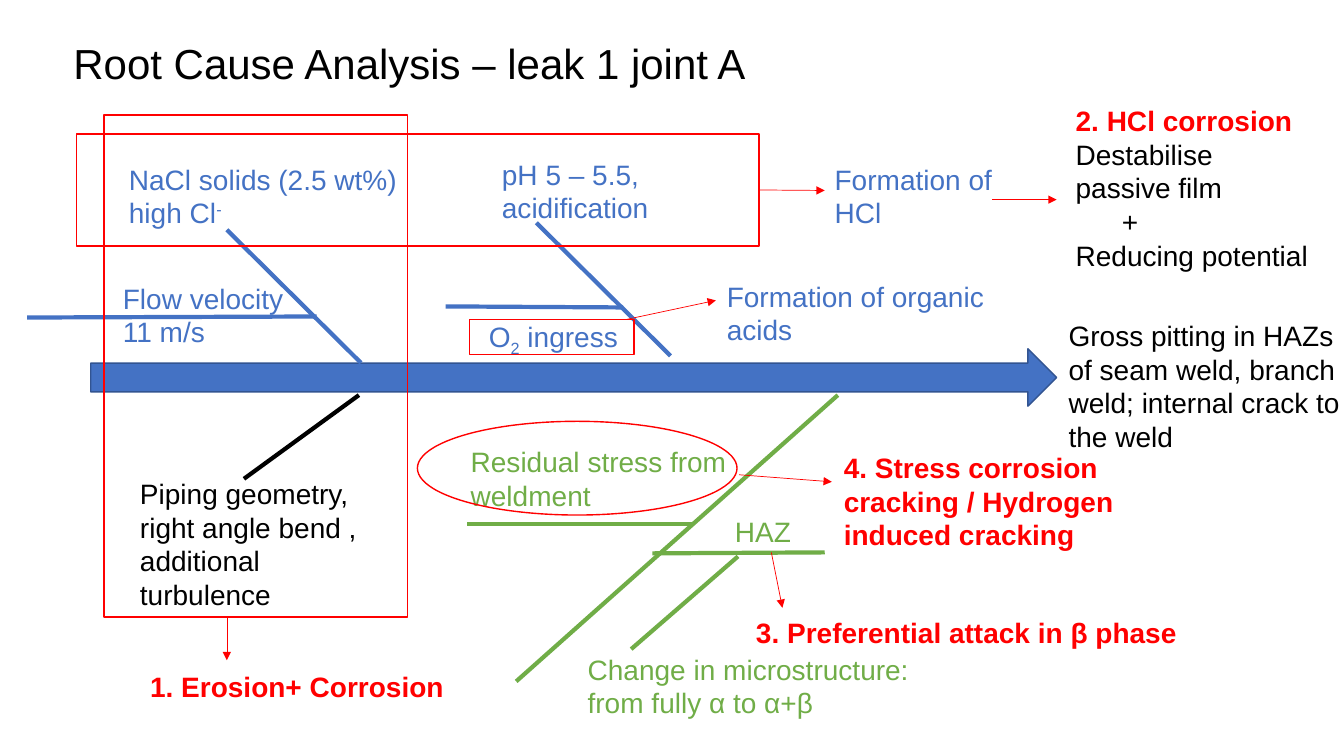
import pptx
import pptx.util
import pptx.dml.color
import pptx.enum.shapes
import pptx.enum.text
import pptx.oxml.ns
import lxml.etree

BLUE, GREEN, RED, BLACK, NAVY = "4472C4", "70AD47", "FF0000", "000000", "325491"
COLS, ROWS = 1333, 750
FONT, SIZE, HEAD = "Arial", 20, 30

TITLE = ((63, -7, 1150, 145), BLACK, ["Root Cause Analysis – leak 1 joint A"])

NOTES = [
    ((112, 274, 292, 77), BLUE, ["Flow velocity", "11 m/s"]),
    ((488, 151, 277, 77), BLUE, ["pH 5 – 5.5, acidification"]),
    ((118, 156, 311, 77), BLUE, [[("NaCl solids (2.5 wt%) high Cl", 0), ("-", 30)]]),
    ((129, 468, 274, 145), BLACK,
     ["Piping geometry, right angle bend , additional turbulence"]),
    ((475, 312, 241, 44), BLUE, [[("O", 0), ("2", -25), (" ingress", 0)]]),
    ((457, 436, 274, 77), GREEN, ["Residual stress from weldment"]),
    ((818, 156, 206, 77), BLUE, ["Formation of HCl"]),
    ((1057, 98, 254, 178), BLACK,
     ["2. HCl corrosion", "Destabilise passive film", "+", "Reducing potential"]),
    ((139, 659, 417, 44), RED, ["1. Erosion+ Corrosion"]),
    ((719, 506, 274, 44), GREEN, ["HAZ"]),
    ((711, 272, 318, 77), BLUE, ["Formation of organic acids"]),
    ((740, 606, 443, 44), RED, ["3. Preferential attack in β phase"]),
    ((827, 442, 359, 111), RED,
     ["4. Stress corrosion cracking / Hydrogen induced cracking"]),
    ((1050, 311, 291, 145), BLACK,
     ["Gross pitting in HAZs of seam weld, branch weld; internal crack to the weld"]),
    ((573, 642, 381, 77), GREEN, ["Change in microstructure: from fully α to α+β"]),
]

SPINE = (90, 346, 958, 57)
FRAMES = {
    "acid": ("RECTANGLE", (76, 133, 677, 111)),
    "flow": ("RECTANGLE", (103, 114, 301, 498)),
    "oxygen": ("RECTANGLE", (466, 317, 163, 35)),
    "stress": ("OVAL", (414, 418, 317, 93)),
}
BONES = [
    (BLUE, (358, 360, 225, 228)),
    (BLUE, (314, 314, 27, 315)),
    (BLUE, (665, 353, 532, 221)),
    (BLUE, (618, 305, 442, 304)),
    (BLACK, (356, 392, 242, 475)),
    (GREEN, (831, 392, 512, 676)),
    (GREEN, (688, 520, 463, 520)),
    (GREEN, (818, 548, 647, 549)),
    (GREEN, (732, 552, 626, 644)),
]
LINKS = [
    ("acid", (753, 189, 818, 189)),
    (None, (984, 198, 1048, 198)),
    (None, (225, 612, 225, 655)),
    (None, (621, 317, 710, 298)),
    (None, (765, 548, 776, 603)),
    (None, (733, 471, 825, 478)),
]

deck = pptx.Presentation()
deck.slide_width = pptx.util.Inches(13.33)
deck.slide_height = pptx.util.Inches(7.5)
slide = deck.slides.add_slide(deck.slide_layouts[6])
shapes = slide.shapes


def place(box):
    steps = (deck.slide_width / COLS, deck.slide_height / ROWS) * 2
    return [round(part * step) for part, step in zip(box, steps)]


def color(code):
    return pptx.dml.color.RGBColor.from_string(code)


def stroke(item, code, width):
    item.line.color.rgb = color(code)
    item.line.width = pptx.util.Pt(width)


def write(box, code, paras, size=SIZE):
    frame = shapes.add_textbox(*place(box)).text_frame
    frame.word_wrap = True
    for index, text in enumerate(paras):
        para = frame.paragraphs[0] if index == 0 else frame.add_paragraph()
        if text == "+":
            para._p.get_or_add_pPr().set("marL", str(pptx.util.Inches(0.46)))
        lead = text[0].isdigit() if isinstance(text, str) else False
        for part, base in [(text, 0)] if isinstance(text, str) else text:
            run = para.add_run()
            run.text = part
            run.font.name = FONT
            run.font.size = pptx.util.Pt(size)
            run.font.bold = lead and part[1] == "."
            run.font.color.rgb = color(RED if run.font.bold else code)
            if base:
                run._r.get_or_add_rPr().set("baseline", str(base * 1000))
    return frame


def draw(kind, box, edge, fill=None):
    form = getattr(pptx.enum.shapes.MSO_SHAPE, kind)
    item = shapes.add_shape(form, *place(box))
    item.shadow.inherit = False
    if fill:
        item.fill.solid()
        item.fill.fore_color.rgb = color(fill)
    else:
        item.fill.background()
    stroke(item, edge, 1)
    return item


def join(ends, code, width, head=False):
    line = shapes.add_connector(pptx.enum.shapes.MSO_CONNECTOR.STRAIGHT, *place(ends))
    stroke(line, code, width)
    qn = pptx.oxml.ns.qn
    if head:
        lxml.etree.SubElement(line.line._get_or_add_ln(), qn("a:tailEnd"), type="triangle")
    lxml.etree.SubElement(line._element.spPr, qn("a:effectLst"))
    return line


title = write(*TITLE, size=HEAD)
title.vertical_anchor = pptx.enum.text.MSO_ANCHOR.MIDDLE
title.paragraphs[0].line_spacing = 0.9
for note in NOTES:
    write(*note)
draw("RIGHT_ARROW", SPINE, NAVY, BLUE)
for code, ends in BONES:
    join(ends, code, 3)
made = {name: draw(kind, box, RED) for name, (kind, box) in FRAMES.items()}
for start, ends in LINKS:
    link = join(ends, RED, 0.5, True)
    if start:
        link.begin_connect(made[start], 3)

deck.save("out.pptx")
